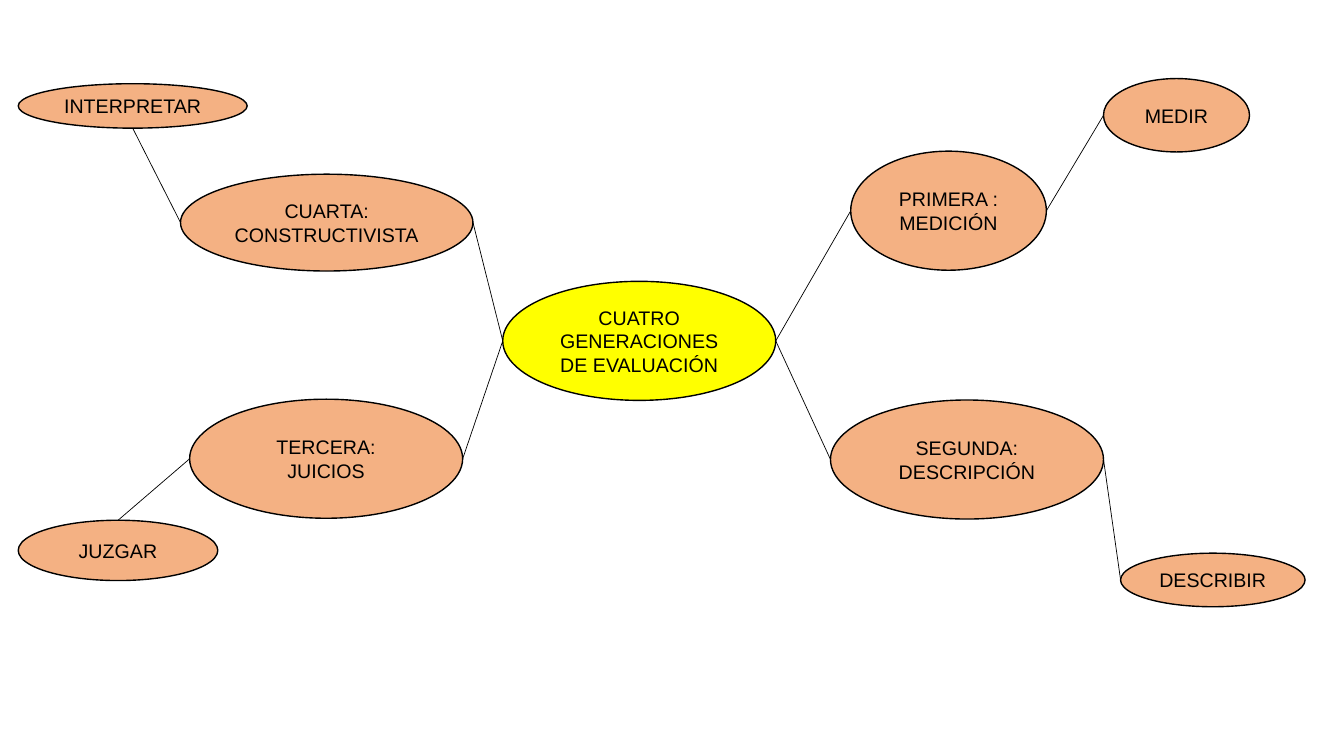
"""Mind map of the four generations of evaluation."""
import pptx
import pptx.dml.color
import pptx.enum.shapes
import pptx.enum.text
import pptx.oxml
import pptx.util

Cm, Pt = pptx.util.Cm, pptx.util.Pt
RGBColor = pptx.dml.color.RGBColor
BLACK = RGBColor(0x00, 0x00, 0x00)
PEACH = RGBColor(0xF4, 0xB1, 0x83)
YELLOW = RGBColor(0xFF, 0xFF, 0x00)


class Map:
    def __init__(self, slide, font="Arial", size=14):
        self.slide, self.font, self.size = slide, font, size

    def node(self, text, left, top, width, height, fill=PEACH):
        oval = self.slide.shapes.add_shape(
            pptx.enum.shapes.MSO_SHAPE.OVAL,
            Cm(left), Cm(top), Cm(width), Cm(height))
        oval.shadow.inherit = False
        oval.fill.solid()
        oval.fill.fore_color.rgb = fill
        oval.line.color.rgb = BLACK
        oval.line.width = Pt(1)
        frame = oval.text_frame
        frame.word_wrap = True
        frame.margin_left = frame.margin_right = Cm(0.22)
        frame.vertical_anchor = pptx.enum.text.MSO_ANCHOR.MIDDLE
        frame.text = text
        para = frame.paragraphs[0]
        para.alignment = pptx.enum.text.PP_ALIGN.CENTER
        para.font.name = self.font
        para.font.size = Pt(self.size)
        para.font.color.rgb = BLACK
        return oval

    def point(self, oval, side):
        across, down = {"left": (0, 0.5), "right": (1, 0.5),
                        "top": (0.5, 0), "bottom": (0.5, 1)}[side]
        return (int(oval.left + across * oval.width),
                int(oval.top + down * oval.height))

    def link(self, start, side, end, goal):
        line = self.slide.shapes.add_connector(
            pptx.enum.shapes.MSO_CONNECTOR.STRAIGHT,
            *self.point(start, side), *self.point(end, goal))
        line.line.color.rgb = BLACK
        line.line.width = Pt(0.5)
        props = line._element.spPr
        props.append(pptx.oxml.parse_xml(
            '<a:effectLst xmlns:a='
            '"http://schemas.openxmlformats.org/drawingml/2006/main"/>'))


def main():
    deck = pptx.Presentation()
    deck.slide_width, deck.slide_height = Cm(33.87), Cm(19.05)
    chart = Map(deck.slides.add_slide(deck.slide_layouts[6]))

    first = chart.node("PRIMERA : MEDICIÓN", 21.44, 3.81, 4.93, 3)
    third = chart.node("TERCERA: JUICIOS", 4.78, 10.06, 6.88, 3)
    fourth = chart.node("CUARTA: CONSTRUCTIVISTA", 4.55, 4.39, 7.37, 2.44)
    second = chart.node("SEGUNDA: DESCRIPCIÓN", 20.93, 10.08, 6.88, 3)
    core = chart.node("CUATRO GENERACIONES DE EVALUACIÓN",
                      12.67, 7.09, 6.88, 3, YELLOW)
    gauge = chart.node("MEDIR", 27.81, 1.98, 3.68, 1.85)
    judge = chart.node("JUZGAR", 0.46, 13.11, 5.03, 1.52)
    explain = chart.node("INTERPRETAR", 0.46, 2.11, 5.77, 1.12)
    describe = chart.node("DESCRIBIR", 28.24, 13.94, 4.65, 1.35)

    for start, side, end, goal in [
        (core, "right", first, "left"),
        (first, "right", gauge, "left"),
        (core, "right", second, "left"),
        (second, "right", describe, "left"),
        (fourth, "right", core, "left"),
        (third, "right", core, "left"),
        (explain, "bottom", fourth, "left"),
        (judge, "top", third, "left"),
    ]:
        chart.link(start, side, end, goal)

    deck.save("out.pptx")


if __name__ == "__main__":
    main()
